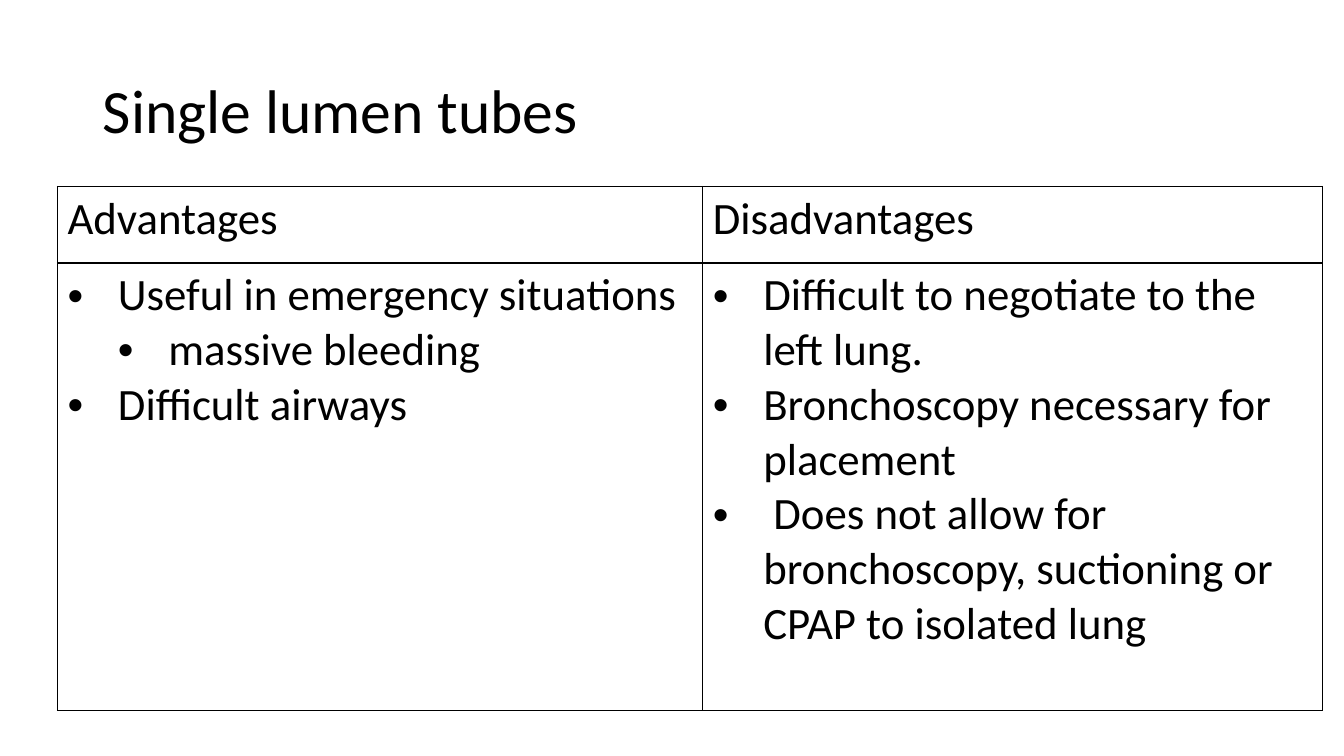
from lxml import etree
from pptx import Presentation
from pptx import util as u
from pptx.dml.color import RGBColor
from pptx.enum import text
from pptx.oxml.ns import qn

THEME = {"font": "Calibri", "ink": "000000", "title": 44, "body": 32, "border": 1}
INDENT = u.Inches(0.5)

HEADINGS = ["Advantages", "Disadvantages"]
POINTS = [  # (level, wording) for each column
    [(0, "Useful in emergency situations"),
     (1, "massive bleeding"),
     (0, "Difficult airways")],
    [(0, "Difficult to negotiate to the left lung."),
     (0, "Bronchoscopy necessary for placement"),
     (0, " Does not allow for bronchoscopy, suctioning or CPAP to isolated lung")],
]


def style(para, size):
    for span in para.runs:
        span.font.name = THEME["font"]
        span.font.size = u.Pt(size)
        span.font.bold = False
        span.font.color.rgb = RGBColor.from_string(THEME["ink"])


def outline(cell):
    """Draw all four borders of a table cell and clear its fill."""
    props = cell._tc.get_or_add_tcPr()
    for side in ("lnL", "lnR", "lnT", "lnB"):
        line = etree.SubElement(props, qn(f"a:{side}"), w=str(u.Pt(THEME["border"])))
        fill = etree.SubElement(line, qn("a:solidFill"))
        etree.SubElement(fill, qn("a:srgbClr"), val=THEME["ink"])
    cell.fill.background()


deck = Presentation()
deck.slide_width, deck.slide_height = u.Inches(13.33), u.Inches(7.5)
page = deck.slides.add_slide(deck.slide_layouts.get_by_name("Title Only"))

title = page.shapes.title
title.left, title.top = u.Inches(0.92), u.Inches(0.4)
title.width, title.height = u.Inches(11.5), u.Inches(1.45)
title.text_frame.text = "Single lumen tubes"
title.text_frame.vertical_anchor = text.MSO_ANCHOR.MIDDLE
heading = title.text_frame.paragraphs[0]
heading.alignment = text.PP_ALIGN.LEFT
heading.line_spacing = 0.9
style(heading, THEME["title"])

widths = [u.Inches(6.4), u.Inches(6.15)]
heights = [u.Inches(0.76), u.Inches(4.44)]
table = page.shapes.add_table(2, 2, u.Inches(0.57), u.Inches(1.85),
                              sum(widths), sum(heights)).table
table.first_row = table.horz_banding = False
for row, height in zip(table.rows, heights):
    row.height = height

for index, (name, points) in enumerate(zip(HEADINGS, POINTS)):
    table.columns[index].width = widths[index]
    head, body = table.cell(0, index), table.cell(1, index)
    outline(head)
    outline(body)

    head.text_frame.text = name
    style(head.text_frame.paragraphs[0], THEME["body"])

    body.text_frame.text = "\n".join(wording for _, wording in points)
    for para, (level, _) in zip(body.text_frame.paragraphs, points):
        para.level = level
        props = para._p.get_or_add_pPr()
        props.set("marL", str(INDENT * (level + 1)))
        props.set("indent", str(-INDENT))
        etree.SubElement(props, qn("a:buFont"), typeface="Arial")
        etree.SubElement(props, qn("a:buChar"), char="•")
        style(para, THEME["body"])

deck.save("out.pptx")
